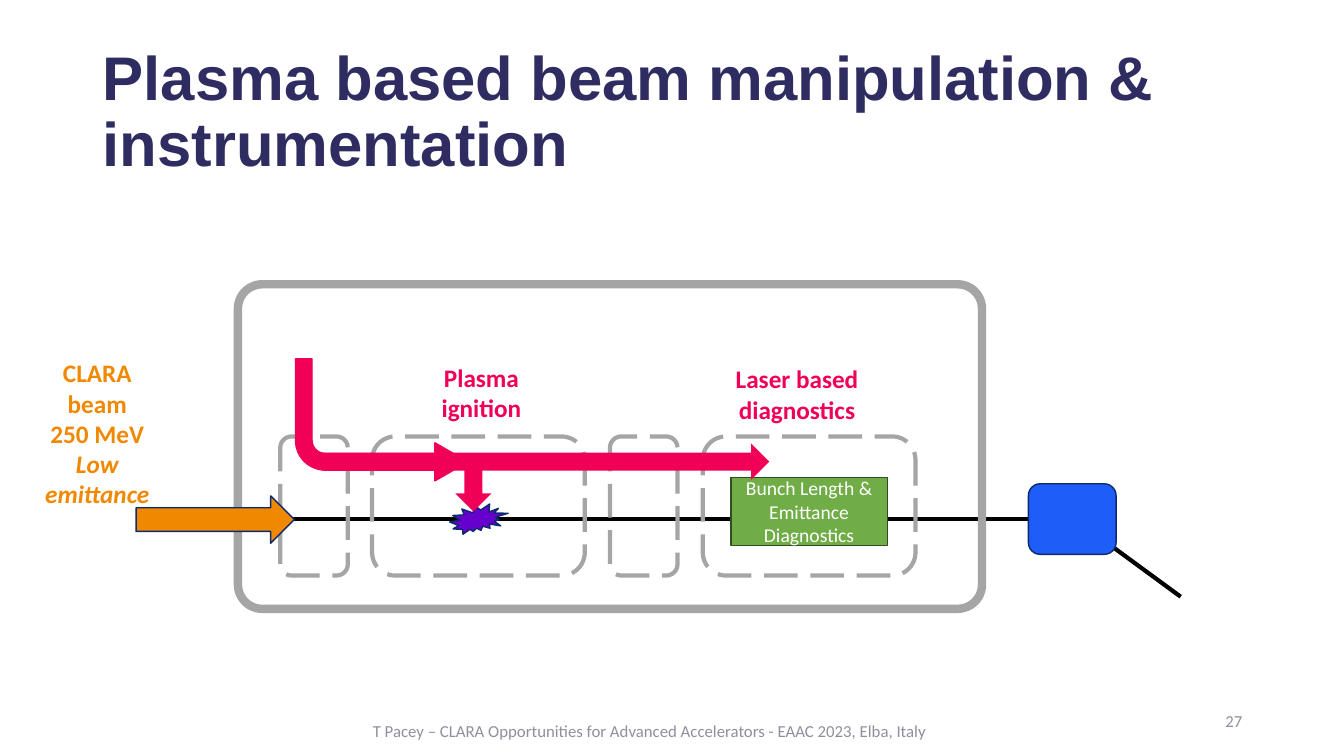
from dataclasses import dataclass
from typing import Optional

import pptx
import pptx.dml.color
import pptx.enum.dml
import pptx.enum.shapes
import pptx.enum.text
import pptx.oxml.ns
import pptx.util
from lxml import etree

Inches = pptx.util.Inches
Shape = pptx.enum.shapes.MSO_SHAPE
Align = pptx.enum.text.PP_ALIGN
Anchor = pptx.enum.text.MSO_ANCHOR

NAVY, PINK, ORANGE = "2E2C61", "F00056", "F08900"
GREY, OUTLINE, FOOTER = "A5A5A5", "0D296D", "8F8F9E"


@dataclass
class Part:
    kind: Shape
    at: tuple[float, float, float, float]
    fill: Optional[str] = None
    line: Optional[str] = None
    width: float = 1
    dashed: bool = False
    adjust: tuple[float, ...] = ()
    turn: float = 0
    mirrored: bool = False


@dataclass
class Label:
    at: tuple[float, float, float, float]
    lines: tuple[str, ...]
    color: str
    size: float = 18
    bold: bool = True
    align: Align = Align.CENTER
    anchor: Anchor = Anchor.TOP
    italic_last: bool = False


def rgb(color: str) -> pptx.dml.color.RGBColor:
    return pptx.dml.color.RGBColor.from_string(color)


def add_run(paragraph, text: str, font: str, size: float, color: str,
            bold: bool = False, italic: bool = False) -> None:
    run = paragraph.add_run()
    run.text = text
    run.font.name = font
    run.font.size = pptx.util.Pt(size)
    run.font.color.rgb = rgb(color)
    run.font.bold = bold
    run.font.italic = italic


def draw_part(slide, part: Part):
    shape = slide.shapes.add_shape(part.kind, *map(Inches, part.at))
    shape.shadow.inherit = False
    for index, value in enumerate(part.adjust):
        shape.adjustments[index] = value
    shape.rotation = part.turn
    if part.mirrored:
        shape._element.spPr.find(pptx.oxml.ns.qn("a:xfrm")).set("flipH", "1")
    if part.fill:
        shape.fill.solid()
        shape.fill.fore_color.rgb = rgb(part.fill)
    else:
        shape.fill.background()
    if part.line:
        shape.line.color.rgb = rgb(part.line)
        shape.line.width = pptx.util.Pt(part.width)
        if part.dashed:
            shape.line.dash_style = pptx.enum.dml.MSO_LINE.LONG_DASH
    else:
        shape.line.fill.background()
    return shape


def draw_beamline(slide, start: tuple[float, float], end: tuple[float, float]) -> None:
    beam = slide.shapes.add_connector(pptx.enum.shapes.MSO_CONNECTOR.STRAIGHT,
                                      *map(Inches, start + end))
    beam.line.color.rgb = rgb("000000")
    beam.line.width = pptx.util.Pt(3)
    etree.SubElement(beam._element.spPr, pptx.oxml.ns.qn("a:effectLst"))


def write_lines(frame, label: Label) -> None:
    frame.word_wrap = True
    frame.vertical_anchor = label.anchor
    for index, line in enumerate(label.lines):
        paragraph = frame.add_paragraph() if index else frame.paragraphs[0]
        paragraph.alignment = label.align
        italic = label.italic_last and index == len(label.lines) - 1
        add_run(paragraph, line, "Calibri", label.size, label.color, label.bold, italic)


def draw_label(slide, label: Label) -> None:
    write_lines(slide.shapes.add_textbox(*map(Inches, label.at)).text_frame, label)


def draw_title(slide) -> None:
    title = slide.shapes.title
    title.left, title.top, title.width, title.height = map(Inches, (0.92, 0.4, 11.5, 1.45))
    frame = title.text_frame
    frame.word_wrap = True
    frame.vertical_anchor = Anchor.MIDDLE
    frame.auto_size = pptx.enum.text.MSO_AUTO_SIZE.NONE
    paragraph = frame.paragraphs[0]
    paragraph.alignment = Align.LEFT
    paragraph.line_spacing = 0.9
    add_run(paragraph, "Plasma based beam manipulation & instrumentation",
            "Arial", 44, NAVY, bold=True)


CHAMBERS = [(3.69, 2.11), (6.97, 2.11), (6.05, 0.67), (2.78, 0.67)]  # left, width

ENCLOSURE = [
    Part(Shape.ROUNDED_RECTANGLE, (2.36, 2.82, 7.38, 3.22), line=GREY, width=6, adjust=(0.075,)),
    *(Part(Shape.ROUNDED_RECTANGLE, (left, 4.33, width, 1.38), line=GREY, width=3, dashed=True)
      for left, width in CHAMBERS),
    Part(Shape.ROUNDED_RECTANGLE, (10.2, 4.8, 0.87, 0.7), "1E5DF8", OUTLINE),
    Part(Shape.BENT_ARROW, (2.93, 3.56, 1.71, 1.21), PINK, PINK,
         adjust=(0.136, 0.156, 0.27, 0.244), turn=180, mirrored=True),
    Part(Shape.RIGHT_ARROW, (1.35, 4.92, 1.57, 0.47), ORANGE, OUTLINE),
]
DIAGNOSTICS = Part(Shape.RECTANGLE, (7.25, 4.74, 1.55, 0.67), "70AD47", "314C1F")
DIAGNOSTICS_TEXT = Label(DIAGNOSTICS.at, ("Bunch Length & Emittance Diagnostics",), "FFFFFF",
                         14, bold=False, anchor=Anchor.MIDDLE)
PLASMA_AND_LASER = [
    Part(Shape.EXPLOSION2, (4.46, 5, 0.58, 0.3), "6600CC", OUTLINE),
    Part(Shape.RIGHT_ARROW, (3.19, 4.4, 4.44, 0.36), PINK),
    Part(Shape.RIGHT_ARROW, (4.46, 4.66, 0.47, 0.36), PINK, turn=90),
]
LABELS = [
    Label((3.97, 3.54, 1.61, 0.71), ("Plasma ignition",), PINK),
    Label((7.1, 3.56, 1.61, 0.71), ("Laser based diagnostics",), PINK),
    Label((0.26, 3.5, 1.41, 1.62), ("CLARA beam", "250 MeV", "Low emittance"), ORANGE,
          italic_last=True),
    Label((9.42, 6.95, 3, 0.4), ("27",), FOOTER, 12, False, Align.RIGHT, Anchor.MIDDLE),
    Label((3.41, 7.05, 6.07, 0.4),
          ("T Pacey – CLARA Opportunities for Advanced Accelerators - EAAC 2023, Elba, Italy",),
          FOOTER, 12, False, anchor=Anchor.MIDDLE),
]


def main() -> None:
    deck = pptx.Presentation()
    deck.slide_width, deck.slide_height = Inches(13.33), Inches(7.5)
    slide = deck.slides.add_slide(deck.slide_layouts.get_by_name("Title Only"))
    draw_title(slide)

    # Beamline, bent after the dipole
    draw_beamline(slide, (1.37, 5.15), (10.66, 5.15))
    draw_beamline(slide, (10.66, 5.15), (11.71, 5.92))

    # Enclosure, chambers and incoming beams
    for part in ENCLOSURE:
        draw_part(slide, part)

    # Diagnostics station
    write_lines(draw_part(slide, DIAGNOSTICS).text_frame, DIAGNOSTICS_TEXT)

    # Plasma source and laser paths
    for part in PLASMA_AND_LASER:
        draw_part(slide, part)

    # Labels and footer
    for label in LABELS:
        draw_label(slide, label)

    deck.save("out.pptx")


if __name__ == "__main__":
    main()
